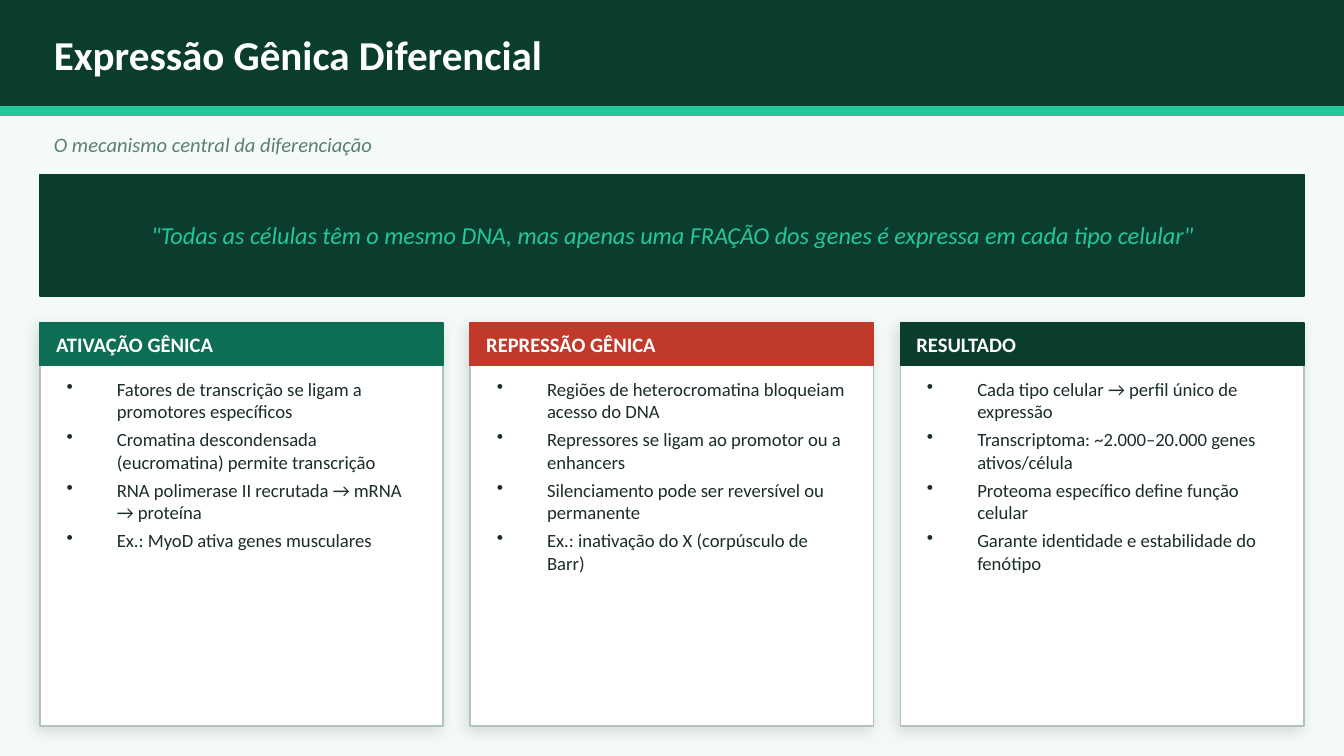
from dataclasses import dataclass

from lxml import etree
from pptx import Presentation
from pptx.dml.color import RGBColor
from pptx.enum import shapes, text
from pptx.oxml import ns
from pptx.util import Cm, Pt


@dataclass(frozen=True)
class Theme:
    font: str = "Calibri"
    background: str = "F4FAF7"
    dark: str = "0A3D2E"
    accent: str = "25C79A"
    activation: str = "0D6E55"
    repression: str = "C0392B"
    white: str = "FFFFFF"
    border: str = "B0C4BC"
    muted: str = "5A8070"
    body: str = "1A2E27"
    title_size: int = 22
    quote_size: int = 13
    label_size: int = 11
    body_size: int = 10


@dataclass(frozen=True)
class Box:
    """A rectangle in centimetres."""
    left: float
    top: float
    width: float
    height: float

    def lengths(self) -> list[Cm]:
        return [Cm(value) for value in (self.left, self.top, self.width, self.height)]


@dataclass(frozen=True)
class Card:
    heading: str
    color: str
    points: tuple[str, ...]


THEME = Theme()
SLIDE_WIDTH, SLIDE_HEIGHT = 25.4, 14.29
MARGIN = 0.76
CARD_TOP, CARD_SIZE, CARD_PITCH = 6.1, 7.62, 8.13
HEADING_HEIGHT = 0.81
BULLET_INDENT = 0.95

CARDS = (
    Card("ATIVAÇÃO GÊNICA", THEME.activation, (
        "Fatores de transcrição se ligam a promotores específicos",
        "Cromatina descondensada (eucromatina) permite transcrição",
        "RNA polimerase II recrutada → mRNA → proteína",
        "Ex.: MyoD ativa genes musculares",
    )),
    Card("REPRESSÃO GÊNICA", THEME.repression, (
        "Regiões de heterocromatina bloqueiam acesso do DNA",
        "Repressores se ligam ao promotor ou a enhancers",
        "Silenciamento pode ser reversível ou permanente",
        "Ex.: inativação do X (corpúsculo de Barr)",
    )),
    Card("RESULTADO", THEME.dark, (
        "Cada tipo celular → perfil único de expressão",
        "Transcriptoma: ~2.000–20.000 genes ativos/célula",
        "Proteoma específico define função celular",
        "Garante identidade e estabilidade do fenótipo",
    )),
)


def add_rectangle(slide, box: Box, fill: str, line: str | None = None):
    shape = slide.shapes.add_shape(shapes.MSO_SHAPE.RECTANGLE, *box.lengths())
    shape.shadow.inherit = False
    shape.fill.solid()
    shape.fill.fore_color.rgb = RGBColor.from_string(fill)
    shape.line.color.rgb = RGBColor.from_string(line or fill)
    shape.line.width = Pt(1)
    return shape


def add_soft_shadow(shape) -> None:
    effects = shape._element.spPr.find(ns.qn("a:effectLst"))
    shadow = etree.SubElement(
        effects, ns.qn("a:outerShdw"), blurRad=str(Pt(8)), dist=str(Pt(3)),
        dir=str(135 * 60000), algn="bl", rotWithShape="0")
    color = etree.SubElement(shadow, ns.qn("a:srgbClr"), val="000000")
    etree.SubElement(color, ns.qn("a:alpha"), val="12000")


def add_bullet(paragraph) -> None:
    properties = paragraph._p.get_or_add_pPr()
    properties.set("marL", str(Cm(BULLET_INDENT)))
    properties.set("indent", str(-Cm(BULLET_INDENT)))
    paragraph.space_after = Pt(3)
    etree.SubElement(properties, ns.qn("a:buChar"), char="•")


def add_text(slide, box: Box, lines: tuple[str, ...], size: int, color: str,
             inset: bool = False, bullets: bool = False, centered: bool = False,
             **font_format: bool) -> None:
    frame = slide.shapes.add_textbox(*box.lengths()).text_frame
    horizontal, vertical = (Cm(0.25), Cm(0.13)) if inset else (0, 0)
    frame_format = {
        "word_wrap": True,
        "vertical_anchor": text.MSO_ANCHOR.TOP if bullets else text.MSO_ANCHOR.MIDDLE,
        "margin_left": horizontal, "margin_right": horizontal,
        "margin_top": vertical, "margin_bottom": vertical,
    }
    for name, value in frame_format.items():
        setattr(frame, name, value)

    font_values = {"name": THEME.font, "size": Pt(size), **font_format}
    for index, line in enumerate(lines):
        paragraph = frame.add_paragraph() if index else frame.paragraphs[0]
        if bullets:
            add_bullet(paragraph)
        if centered:
            paragraph.alignment = text.PP_ALIGN.CENTER
        run = paragraph.add_run()
        run.text = line
        for name, value in font_values.items():
            setattr(run.font, name, value)
        run.font.color.rgb = RGBColor.from_string(color)


def add_card(slide, card: Card, left: float) -> None:
    panel = add_rectangle(slide, Box(left, CARD_TOP, CARD_SIZE, CARD_SIZE),
                          THEME.white, THEME.border)
    add_soft_shadow(panel)
    add_rectangle(slide, Box(left, CARD_TOP, CARD_SIZE, HEADING_HEIGHT), card.color)
    add_text(slide, Box(left + 0.3, CARD_TOP, 7.26, HEADING_HEIGHT), (card.heading,),
             THEME.label_size, THEME.white, bold=True)
    add_text(slide, Box(left + 0.25, CARD_TOP + 0.91, 7.11, 6.55), card.points,
             THEME.body_size, THEME.body, inset=True, bullets=True)


def add_header(slide) -> None:
    add_rectangle(slide, Box(0, 0, SLIDE_WIDTH, 2.03), THEME.dark)
    add_rectangle(slide, Box(0, 2.03, SLIDE_WIDTH, 0.15), THEME.accent)
    add_text(slide, Box(1.02, 0.1, 23.37, 1.83), ("Expressão Gênica Diferencial",),
             THEME.title_size, THEME.white, bold=True)
    add_text(slide, Box(1.02, 2.29, 23.37, 0.89),
             ("O mecanismo central da diferenciação",),
             THEME.label_size, THEME.muted, italic=True)


def add_quote(slide) -> None:
    add_rectangle(slide, Box(MARGIN, 3.3, SLIDE_WIDTH - 2 * MARGIN, 2.29), THEME.dark)
    quote = ('"Todas as células têm o mesmo DNA, mas apenas uma FRAÇÃO dos genes '
             'é expressa em cada tipo celular"')
    add_text(slide, Box(1.27, 3.43, 22.86, 2.03), (quote,), THEME.quote_size,
             THEME.accent, inset=True, centered=True, italic=True)


def main() -> None:
    presentation = Presentation()
    presentation.slide_width = Cm(SLIDE_WIDTH)
    presentation.slide_height = Cm(SLIDE_HEIGHT)
    slide = presentation.slides.add_slide(presentation.slide_layouts[6])
    slide.background.fill.solid()
    slide.background.fill.fore_color.rgb = RGBColor.from_string(THEME.background)

    add_header(slide)
    add_quote(slide)
    for index, card in enumerate(CARDS):
        add_card(slide, card, MARGIN + index * CARD_PITCH)
    presentation.save("out.pptx")


if __name__ == "__main__":
    main()
